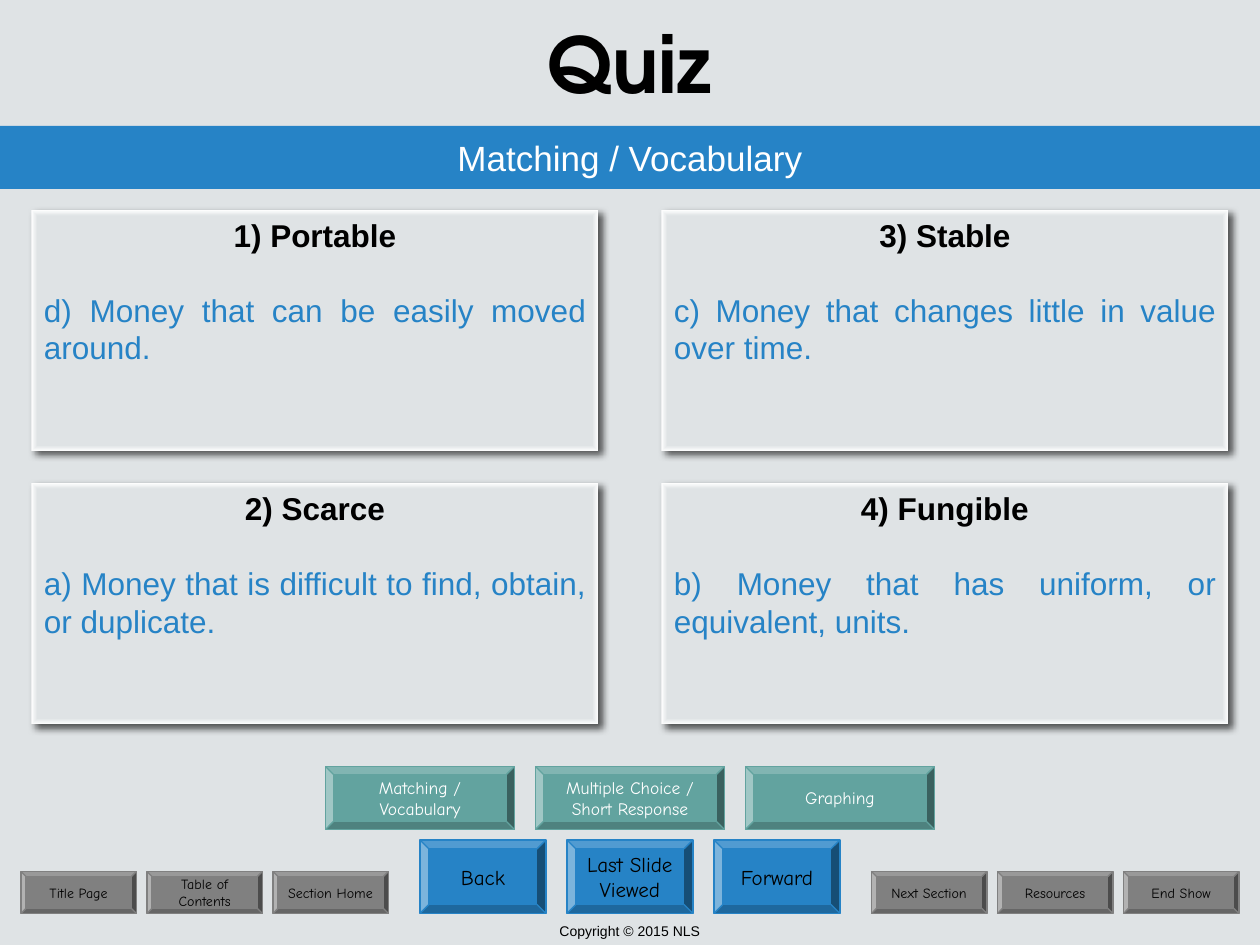
from lxml.etree import SubElement
from pptx import Presentation
from pptx.dml.color import RGBColor
from pptx.enum.shapes import MSO_SHAPE
from pptx.enum.text import MSO_ANCHOR, PP_ALIGN
from pptx.oxml import parse_xml
from pptx.oxml.ns import nsdecls, qn
from pptx.util import Inches, Pt

GRID_UNIT = Inches(1) // 12
COLUMNS, ROWS = 120, 90

PALE = RGBColor(0xDF, 0xE3, 0xE5)
WHITE = RGBColor(0xFF, 0xFF, 0xFF)
BLACK = RGBColor(0x00, 0x00, 0x00)
BLUE = RGBColor(0x26, 0x83, 0xC6)
TEAL = RGBColor(0x62, 0xA3, 0x9F)
GRAY = RGBColor(0x80, 0x80, 0x80)

BODY_FONT = "Arial"
BUTTON_FONT = "Comic Neue"
TITLE_FONT = "TeX Gyre Adventor"


def to_lengths(box):
    return [round(value * GRID_UNIT) for value in box]


def write_paragraph(paragraph, text, size, color, font=BODY_FONT, bold=False,
                    alignment=PP_ALIGN.CENTER):
    paragraph.text = text
    paragraph.alignment = alignment
    paragraph.font.name = font
    paragraph.font.size = Pt(size)
    paragraph.font.bold = bold
    paragraph.font.color.rgb = color


def add_label(slide, box, text, size, **style):
    frame = slide.shapes.add_textbox(*to_lengths(box)).text_frame
    frame.word_wrap = True
    frame.vertical_anchor = MSO_ANCHOR.MIDDLE
    write_paragraph(frame.paragraphs[0], text, size, BLACK, **style)


def add_banner(slide, box, text):
    shape = slide.shapes.add_shape(MSO_SHAPE.RECTANGLE, *to_lengths(box))
    shape.shadow.inherit = False
    shape.fill.solid()
    shape.fill.fore_color.rgb = BLUE
    shape.line.fill.background()
    shape.text_frame.vertical_anchor = MSO_ANCHOR.MIDDLE
    write_paragraph(shape.text_frame.paragraphs[0], text, 20, WHITE)


def style_card(shape):
    shape.shadow.inherit = False
    shape.line.fill.background()
    properties = shape._element.spPr
    gradient = parse_xml(
        f'<a:gradFill {nsdecls("a")} rotWithShape="1"><a:gsLst>'
        f'<a:gs pos="95000"><a:srgbClr val="{PALE}"/></a:gs>'
        f'<a:gs pos="100000"><a:srgbClr val="{WHITE}"/></a:gs></a:gsLst>'
        '<a:path path="shape"><a:fillToRect l="50000" t="50000" r="50000" b="50000"/>'
        '</a:path></a:gradFill>')
    properties.find(qn("a:ln")).addprevious(gradient)
    shadow = SubElement(properties.find(qn("a:effectLst")), qn("a:outerShdw"),
                        blurRad=str(Pt(4)), dist=str(Pt(3)), dir=str(45 * 60000),
                        algn="tl", rotWithShape="0")
    color = SubElement(shadow, qn("a:srgbClr"), val=str(BLACK))
    SubElement(color, qn("a:alpha"), val="64000")


def add_card(slide, box, term, definition):
    shape = slide.shapes.add_shape(MSO_SHAPE.RECTANGLE, *to_lengths(box))
    style_card(shape)
    frame = shape.text_frame
    frame.word_wrap = True
    frame.vertical_anchor = MSO_ANCHOR.TOP
    write_paragraph(frame.paragraphs[0], term, 18, BLACK, bold=True)
    answer = frame.add_paragraph()
    write_paragraph(answer, definition, 18, BLUE, alignment=PP_ALIGN.JUSTIFY)
    answer.space_before = Pt(21)


def add_card_grid(slide, box, cards):
    left, top, width, height = box
    card_width, card_height = 0.47 * width + 0.42, 23
    for index, (term, definition) in enumerate(cards):
        column, row = divmod(index, 2)
        card_left = left + column * (width - card_width)
        card_top = top + row * (height - card_height)
        add_card(slide, (card_left, card_top, card_width, card_height), term, definition)


def add_button(slide, box, caption, size, fill, color):
    shape = slide.shapes.add_shape(MSO_SHAPE.BEVEL, *to_lengths(box))
    shape.shadow.inherit = False
    shape.fill.solid()
    shape.fill.fore_color.rgb = fill
    shape.line.color.rgb = fill
    shape.line.width = Pt(0.75)
    frame = shape.text_frame
    frame.word_wrap = False
    frame.vertical_anchor = MSO_ANCHOR.MIDDLE
    for index, line in enumerate(caption):
        paragraph = frame.add_paragraph() if index else frame.paragraphs[0]
        write_paragraph(paragraph, line, size, color, font=BUTTON_FONT)


def add_button_row(slide, box, gap, captions, size, fill, color):
    left, top, width, height = box
    button_width = (width - gap * (len(captions) - 1)) / len(captions)
    for index, caption in enumerate(captions):
        button_left = left + index * (button_width + gap)
        add_button(slide, (button_left, top, button_width, height),
                   caption, size, fill, color)


def build_slide(presentation):
    slide = presentation.slides.add_slide(presentation.slide_layouts[6])
    slide.background.fill.solid()
    slide.background.fill.fore_color.rgb = PALE

    add_label(slide, (0, 0, COLUMNS, 12), "Quiz", 44, font=TITLE_FONT, bold=True)
    add_banner(slide, (0, 12, COLUMNS, 6), "Matching / Vocabulary")
    add_card_grid(slide, (3, 20, COLUMNS - 6, 49), [
        ("1) Portable", "d) Money that can be easily moved around."),
        ("2) Scarce", "a) Money that is difficult to find, obtain, or duplicate."),
        ("3) Stable", "c) Money that changes little in value over time."),
        ("4) Fungible", "b) Money that has uniform, or equivalent, units."),
    ])
    add_button_row(slide, (31, 73, 58, 6), 2, [
        ["Matching /", "Vocabulary"],
        ["Multiple Choice /", "Short Response"],
        ["Graphing"],
    ], 10, TEAL, WHITE)
    add_button_row(slide, (40, 80, 40, 7), 2, [
        ["Back"], ["Last Slide", "Viewed"], ["Forward"],
    ], 12, BLUE, BLACK)
    add_button_row(slide, (2, 83, 35, 4), 1, [
        ["Title Page"], ["Table of", "Contents"], ["Section Home"],
    ], 8, GRAY, BLACK)
    add_button_row(slide, (83, 83, 35, 4), 1, [
        ["Next Section"], ["Resources"], ["End Show"],
    ], 8, GRAY, BLACK)
    add_label(slide, (0, 87.25, COLUMNS, 2.75), "Copyright © 2015 NLS", 8)


def main():
    presentation = Presentation()
    presentation.slide_width = COLUMNS * GRID_UNIT
    presentation.slide_height = ROWS * GRID_UNIT
    build_slide(presentation)
    presentation.save("out.pptx")


if __name__ == "__main__":
    main()
